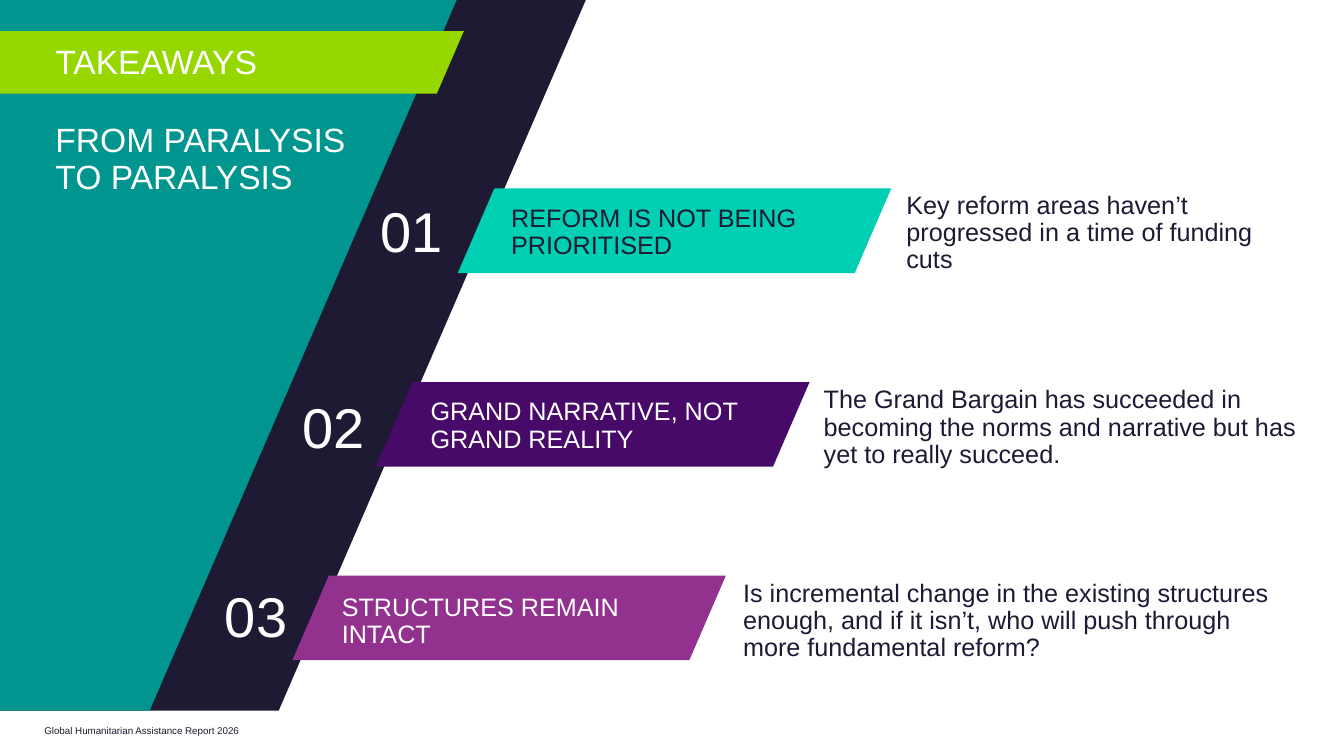
from pptx import Presentation
from pptx.dml.color import RGBColor
from pptx.enum import shapes, text
from pptx.util import Inches, Pt

COLORS = {
    "navy": "1E1A34",
    "teal": "00968F",
    "lime": "97D700",
    "mint": "00CFB4",
    "purple": "470A68",
    "plum": "93328E",
    "white": "FFFFFF",
}
SLANT = 0.432

# number, number (left, top), banner (left, top), fill, label colour,
# label (left, top, width), label, detail (left, top, width, height), detail text
TAKEAWAYS = [
    ("01", (3.59, 1.9), (4.54, 1.87), "mint", "navy",
     (5.07, 2.04, 3.32), "REFORM IS NOT BEING PRIORITISED",
     (8.99, 1.91, 3.84, 0.84),
     "Key reform areas haven’t progressed in a time of funding cuts"),
    ("02", (2.82, 3.84), (3.73, 3.79), "purple", "white",
     (4.27, 3.96, 3.98), "GRAND NARRATIVE, NOT GRAND REALITY",
     (8.17, 3.84, 4.74, 0.53),
     "The Grand Bargain has succeeded in becoming the norms and narrative "
     "but has yet to really succeed."),
    ("03", (2.05, 5.72), (2.9, 5.71), "plum", "white",
     (3.39, 5.9, 3.57), "STRUCTURES REMAIN INTACT",
     (7.37, 5.76, 5.38, 0.94),
     "Is incremental change in the existing structures enough, and if it "
     "isn’t, who will push through more fundamental reform?"),
]


def add_slant(s, left, top, width, height, color):
    sp = s.shapes.add_shape(shapes.MSO_SHAPE.PARALLELOGRAM, Inches(left),
                            Inches(top), Inches(width), Inches(height))
    sp.adjustments[0] = SLANT
    sp.shadow.inherit = False
    sp.fill.solid()
    sp.fill.fore_color.rgb = RGBColor.from_string(COLORS[color])
    sp.line.fill.background()


def add_text(s, left, top, width, height, content, size, color, spacing=0.9):
    sp = s.shapes.add_textbox(Inches(left), Inches(top), Inches(width), Inches(height))
    tf = sp.text_frame
    tf.word_wrap = True
    tf.margin_left = tf.margin_right = tf.margin_top = tf.margin_bottom = 0
    p = tf.paragraphs[0]
    p.text = content
    p.line_spacing = spacing
    p.font.name = "Arial"
    p.font.size = Pt(size)
    p.font.color.rgb = RGBColor.from_string(COLORS[color])
    return tf


def add_number(s, left, top, content):
    tf = add_text(s, left, top, 0.98, 0.77, content, 40, "white", 1.0)
    tf.margin_left = tf.margin_right = Inches(0.1)
    tf.margin_top = tf.margin_bottom = Inches(0.05)
    tf.paragraphs[0].alignment = text.PP_ALIGN.CENTER


def add_takeaway(s, number, number_at, banner_at, fill, label_color,
                 label_at, label, detail_at, detail):
    add_number(s, *number_at, number)
    add_slant(s, *banner_at, 4.3, 0.84, fill)
    add_text(s, *label_at, 0.54, label, 18, label_color)
    add_text(s, *detail_at, detail, 18, "navy")


def main():
    prs = Presentation()
    prs.slide_width, prs.slide_height = Inches(13.33), Inches(7.5)
    s = prs.slides.add_slide(prs.slide_layouts[6])

    # Slanted side panel
    add_slant(s, -4.04, 0, 9.85, 7.05, "navy")
    add_slant(s, -4.04, 0, 8.57, 7.05, "teal")

    # Heading
    add_slant(s, -1.28, 0.31, 5.88, 0.62, "lime")
    add_text(s, 0.55, 0.45, 3.56, 0.32, "TAKEAWAYS", 24, "white")
    add_text(s, 0.55, 1.23, 3.56, 1, "FROM PARALYSIS\vTO PARALYSIS", 24, "white")

    # Numbered takeaways
    for takeaway in TAKEAWAYS:
        add_takeaway(s, *takeaway)

    # Footer
    add_text(s, 0.44, 7.19, 4.5, 0.39,
             "Global Humanitarian Assistance Report 2026", 7, "navy", 1.0)

    prs.save("out.pptx")


if __name__ == "__main__":
    main()
